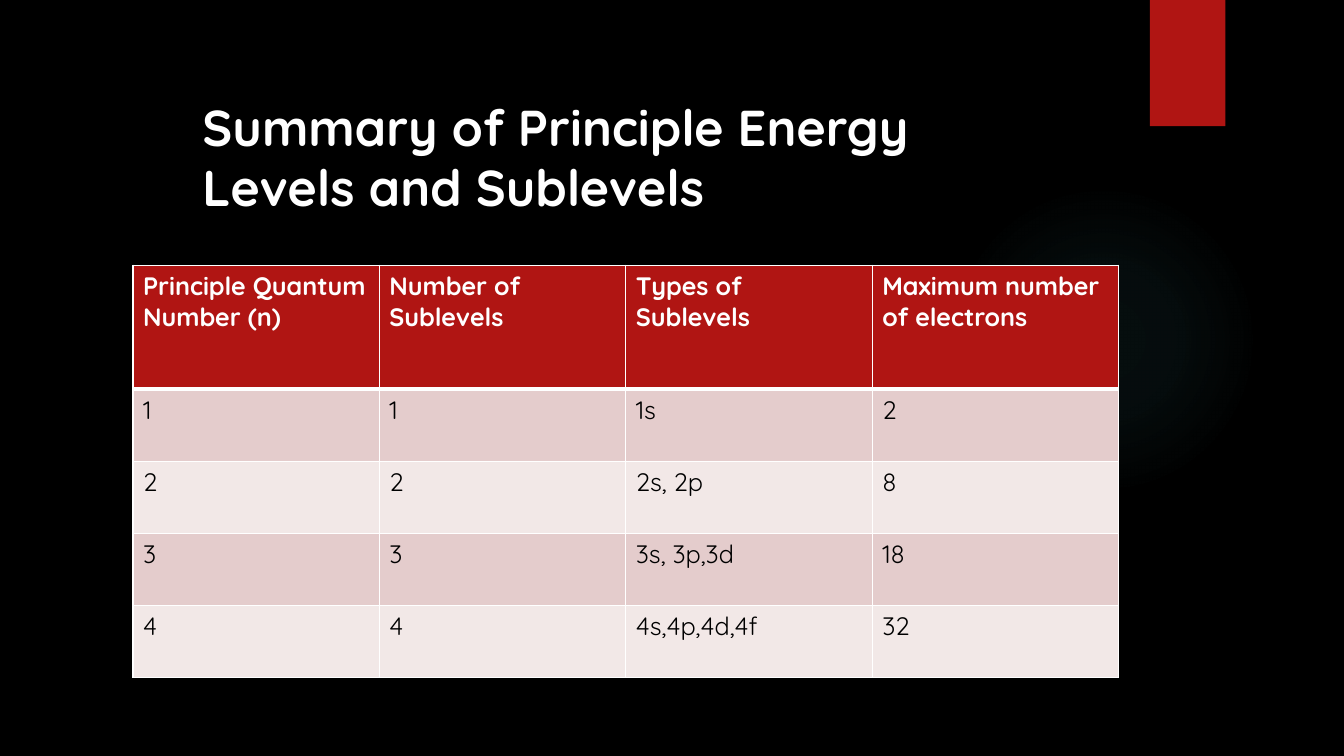
from lxml import etree
from pptx import Presentation
from pptx.dml.color import RGBColor
from pptx.enum import shapes
from pptx.oxml import parse_xml
from pptx.oxml.ns import nsdecls, qn
from pptx.util import Cm, Pt

BLACK = RGBColor(0x00, 0x00, 0x00)
WHITE = RGBColor(0xFF, 0xFF, 0xFF)
RED = RGBColor(0xB0, 0x15, 0x13)
TEAL = RGBColor(0x50, 0xB9, 0xC1)
ROSE = RGBColor(0xE4, 0xCC, 0xCC)
PALE_ROSE = RGBColor(0xF2, 0xE8, 0xE7)

FONT = "Quicksand"
LEVELS = [
    ("Principle Quantum Number (n)", "Number of Sublevels",
     "Types of Sublevels", "Maximum number of electrons"),
    ("1", "1", "1s", "2"),
    ("2", "2", "2s, 2p", "8"),
    ("3", "3", "3s, 3p,3d", "18"),
    ("4", "4", "4s,4p,4d,4f", "32"),
]
GLOW_STOPS = [(0, 7), (36, 6), (69, 0)]


def write_text(frame, content, size=18, color=BLACK, bold=False):
    frame.word_wrap = True
    paragraph = frame.paragraphs[0]
    run = paragraph.add_run()
    run.text = content
    run.font.name = FONT
    run.font.size = Pt(size)
    run.font.bold = bold
    run.font.color.rgb = color


def add_plain_shape(slide, kind, left, top, width, height):
    shape = slide.shapes.add_shape(kind, Cm(left), Cm(top), Cm(width), Cm(height))
    shape.shadow.inherit = False
    shape.line.fill.background()
    return shape


def add_glow(slide):
    """Add the faint teal disc that fades out towards its rim."""
    glow = add_plain_shape(slide, shapes.MSO_SHAPE.OVAL, 23.9, 4.65, 7.82, 7.82)
    stops = "".join(
        f'<a:gs pos="{position * 1000}"><a:srgbClr val="{TEAL}">'
        f'<a:alpha val="{opacity * 1000}"/></a:srgbClr></a:gs>'
        for position, opacity in GLOW_STOPS)
    gradient = parse_xml(
        f'<a:gradFill {nsdecls("a")}><a:gsLst>{stops}</a:gsLst><a:path path="circle">'
        '<a:fillToRect l="50000" t="50000" r="50000" b="50000"/></a:path></a:gradFill>')
    glow.element.spPr.find(qn("a:prstGeom")).addnext(gradient)


def add_ribbon(slide):
    ribbon = add_plain_shape(slide, shapes.MSO_SHAPE.RECTANGLE, 28.98, 0, 1.9, 3.18)
    ribbon.fill.solid()
    ribbon.fill.fore_color.rgb = RED
    effects = ribbon.element.spPr.find(qn("a:effectLst"))
    effects.append(parse_xml(
        f'<a:outerShdw {nsdecls("a")} blurRad="{Pt(3)}" dist="{Pt(2)}" dir="5400000" '
        f'rotWithShape="0"><a:srgbClr val="{BLACK}"><a:alpha val="45000"/>'
        '</a:srgbClr></a:outerShdw>'))


def add_borders(cell, **widths):
    properties = cell._tc.get_or_add_tcPr()
    for side in ("L", "R", "T", "B"):
        line = etree.SubElement(properties, qn(f"a:ln{side}"), w=str(Pt(widths.get(side, 1))))
        fill = etree.SubElement(line, qn("a:solidFill"))
        etree.SubElement(fill, qn("a:srgbClr"), val=str(WHITE))


def add_levels_table(slide):
    table = slide.shapes.add_table(
        len(LEVELS), len(LEVELS[0]), Cm(3.35), Cm(6.68), Cm(24.84), Cm(10.4)).table
    for column in table.columns:
        column.width = Cm(6.21)
    for row_index, values in enumerate(LEVELS):
        header = row_index == 0
        table.rows[row_index].height = Cm(3.12 if header else 1.82)
        background = RED if header else (PALE_ROSE, ROSE)[row_index % 2]
        for column_index, value in enumerate(values):
            cell = table.cell(row_index, column_index)
            add_borders(cell, T=3 if row_index == 1 else 1, B=3 if header else 1)
            cell.fill.solid()
            cell.fill.fore_color.rgb = background
            write_text(cell.text_frame, value, color=WHITE if header else BLACK, bold=header)


def add_title(slide):
    box = slide.shapes.add_textbox(Cm(4.85), Cm(2.29), Cm(21.39), Cm(3.33))
    write_text(box.text_frame, "Summary of Principle Energy Levels and Sublevels",
               size=36, color=WHITE, bold=True)


def main():
    presentation = Presentation()
    presentation.slide_width = Cm(33.87)
    presentation.slide_height = Cm(19.05)
    slide = presentation.slides.add_slide(presentation.slide_layouts[6])
    slide.background.fill.solid()
    slide.background.fill.fore_color.rgb = BLACK
    add_glow(slide)
    add_ribbon(slide)
    add_levels_table(slide)
    add_title(slide)
    presentation.save("out.pptx")


if __name__ == "__main__":
    main()
